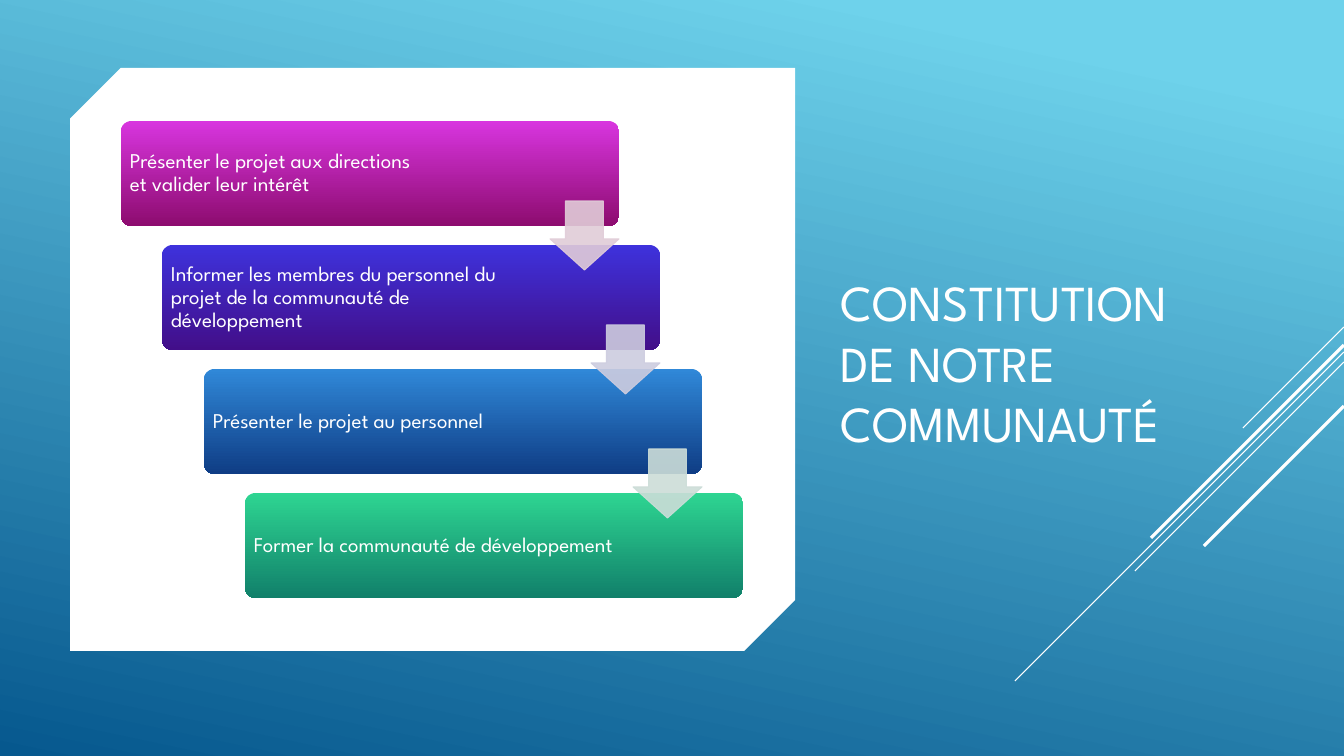
from lxml import etree
from pptx import Presentation, util as u
from pptx.dml.color import RGBColor
from pptx.enum import shapes, text
from pptx.oxml.ns import qn

SCALE = 914400 / 100.8
FONT = "League Spartan"
WHITE = RGBColor(0xFF, 0xFF, 0xFF)
SKY = RGBColor(0x6E, 0xD2, 0xEB)
NAVY = RGBColor(0x06, 0x58, 0x8E)
PINK = RGBColor(0xD8, 0x35, 0xDF)
PLUM = RGBColor(0x8D, 0x0C, 0x6F)
VIOLET = RGBColor(0x3E, 0x32, 0xDC)
GRAPE = RGBColor(0x42, 0x0E, 0x89)
BLUE = RGBColor(0x30, 0x88, 0xD8)
DEEP = RGBColor(0x0F, 0x3D, 0x85)
MINT = RGBColor(0x2E, 0xD5, 0x92)
TEAL = RGBColor(0x11, 0x80, 0x6A)
ROSE = RGBColor(0xE1, 0xCC, 0xD8)
LILAC = RGBColor(0xCD, 0xCC, 0xDF)
SAGE = RGBColor(0xCC, 0xDD, 0xD8)

STEPS = [
    (["Présenter le projet aux directions", "et valider leur intérêt"], PINK, PLUM, ROSE),
    (["Informer les membres du personnel du projet de la communauté de développement"],
     VIOLET, GRAPE, LILAC),
    (["Présenter le projet au personnel"], BLUE, DEEP, SAGE),
    (["Former la communauté de développement"], MINT, TEAL, None),
]
RAYS = [(327, 101, 0.75), (352, 329, 0.75), (362, 209, 0.75), (345, 193, 2.25), (406, 140, 2.25)]


def px(n):
    return u.Emu(round(n * SCALE))


def apply(item, values):
    for name, value in values.items():
        setattr(item, name, value)


class Deck:
    def __init__(self, wide, high):
        self.prs = Presentation()
        apply(self.prs, {"slide_width": px(wide), "slide_height": px(high)})
        self.slide = self.prs.slides.add_slide(self.prs.slide_layouts[6])
        self.items = self.slide.shapes

    def shape(self, kind, box, adjust=()):
        item = self.items.add_shape(kind, *map(px, box))
        item.shadow.inherit = False
        item.line.fill.background()
        for i, value in enumerate(adjust):
            item.adjustments[i] = value
        return item

    def solid(self, kind, box, color, adjust=()):
        item = self.shape(kind, box, adjust)
        item.fill.solid()
        item.fill.fore_color.rgb = color
        return item

    def blend(self, kind, box, stops, angle, adjust=()):
        fill = self.shape(kind, box, adjust).fill
        fill.gradient()
        fill.gradient_angle = 360 - angle
        for stop, (place, color) in zip(fill.gradient_stops, stops):
            stop.position = place
            stop.color.rgb = color

    def arrow(self, box, color):
        item = self.solid(shapes.MSO_SHAPE.DOWN_ARROW, box, color, (0.55, 0.45))
        item.line.color.rgb = color
        item.line.width = u.Pt(0.75)
        for node in item.element.spPr.iter(qn("a:srgbClr")):
            etree.SubElement(node, qn("a:alpha")).set("val", "90000")

    def ray(self, start, end, width):
        item = self.items.add_connector(shapes.MSO_CONNECTOR.STRAIGHT, *map(px, start + end))
        item.line.color.rgb = WHITE
        item.line.width = u.Pt(width)
        etree.SubElement(item.element.spPr, qn("a:effectLst"))

    def label(self, box, lines, size, spacing, frame):
        body = self.items.add_textbox(*map(px, box)).text_frame
        apply(body, {"word_wrap": True, **frame})
        body.text = "\n".join(lines)
        for para in body.paragraphs:
            para.line_spacing = spacing
            apply(para.runs[0].font, {"name": FONT, "size": u.Pt(size)})
            para.runs[0].font.color.rgb = WHITE


def main():
    deck = Deck(1344, 756)
    kind = shapes.MSO_SHAPE
    anchor = text.MSO_ANCHOR
    deck.blend(kind.RECTANGLE, (0, 0, 1344, 756), [(0.1, SKY), (1, NAVY)], 102)
    deck.label((831, 69, 403, 389), ["CONSTITUTION DE NOTRE COMMUNAUTÉ"], 36, 1.0,
               {"vertical_anchor": anchor.BOTTOM})
    deck.solid(kind.SNIP_2_DIAG_RECTANGLE, (70, 68, 725, 583), WHITE, (0.087, 0))
    for top, size, width in RAYS:
        deck.ray((1344, top), (1344 - size, top + size), width)

    sides = ("left", "top", "right", "bottom")
    frame = {"margin_" + side: px(6) for side in sides}
    frame["vertical_anchor"] = anchor.MIDDLE
    spots = [(121 + 83 * i // 2, 121 + 124 * i) for i in range(len(STEPS))]
    for (left, top), (lines, light, dark, _) in zip(spots, STEPS):
        deck.blend(kind.ROUNDED_RECTANGLE, (left, top, 498, 105),
                   [(0, light), (1, dark)], 90, (0.1,))
        deck.label((left + 3, top + 3, 382, 99), lines, 15, 0.9, frame)
    for (left, top), (*_, tint) in zip(spots, STEPS):
        if tint:
            deck.arrow((left + 429, top + 80, 69, 69), tint)
    deck.prs.save("out.pptx")


if __name__ == "__main__":
    main()
